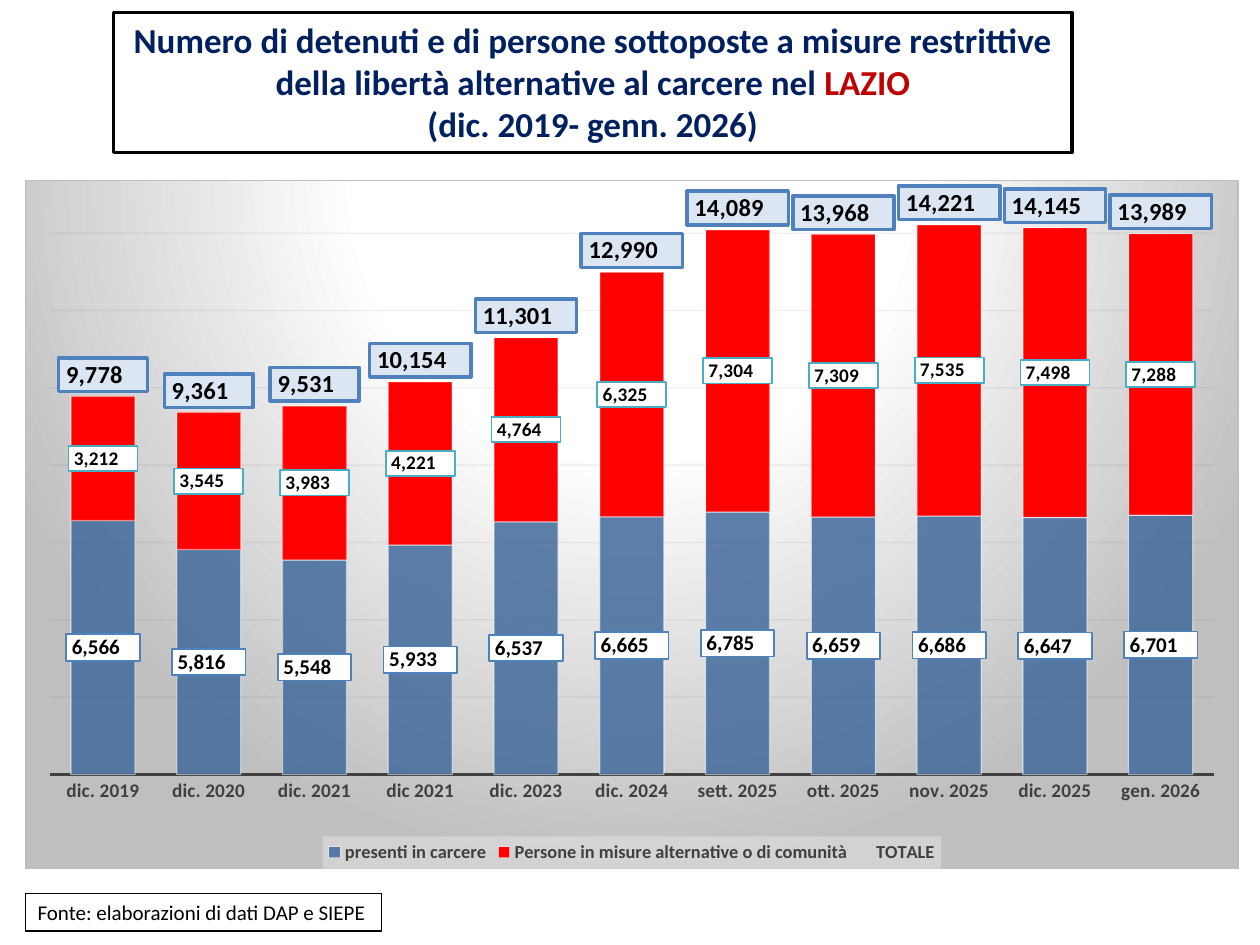
from dataclasses import dataclass

from lxml import etree
from pptx import Presentation
from pptx.chart.data import CategoryChartData
from pptx.dml.color import RGBColor as Rgb
from pptx.enum.chart import XL_CHART_TYPE as ChartType
from pptx.enum.chart import XL_LABEL_POSITION as LabelPlace
from pptx.enum.chart import XL_LEGEND_POSITION as LegendPlace
from pptx.enum.chart import XL_TICK_LABEL_POSITION as TickLabels
from pptx.enum.chart import XL_TICK_MARK as Tick
from pptx.enum.shapes import MSO_SHAPE as Preset
from pptx.enum.text import MSO_ANCHOR as Anchor
from pptx.enum.text import PP_ALIGN as Align
from pptx.oxml import parse_xml
from pptx.oxml.ns import nsdecls, qn
from pptx.util import Inches, Pt


@dataclass(frozen=True)
class Theme:
    font: str = "Calibri"
    navy: str = "002060"
    crimson: str = "C00000"
    black: str = "000000"
    white: str = "FFFFFF"
    axis: str = "404040"
    grid: str = "0D0D0D"
    grey: str = "BFBFBF"
    legend_fill: str = "F2F2F2"
    title_size: float = 20
    source_size: float = 12
    axis_size: float = 11
    legend_size: float = 10.5


@dataclass(frozen=True)
class Series:
    name: str
    values: tuple
    fill: str | None
    alpha: int
    label_size: float
    label_fill: str
    label_line: str
    label_width: float
    place: LabelPlace


@dataclass(frozen=True)
class Area:
    """Left, top, width and height in inches."""
    left: float
    top: float
    width: float
    height: float

    def lengths(self) -> tuple:
        return tuple(map(Inches, (self.left, self.top, self.width, self.height)))


THEME = Theme()
NUMBER_FORMAT = r'_-* #,##0\ _€_-;\-* #,##0\ _€_-;_-* "-"?'
MONTHS = ("dic. 2019", "dic. 2020", "dic. 2021", "dic 2021", "dic. 2023", "dic. 2024",
          "sett. 2025", "ott. 2025", "nov. 2025", "dic. 2025", "gen. 2026")
PRISON = (6566, 5816, 5548, 5933, 6537, 6665, 6785, 6659, 6686, 6647, 6701)
ALTERNATIVE = (3212, 3545, 3983, 4221, 4764, 6325, 7304, 7309, 7535, 7498, 7288)
TOTAL = tuple(map(sum, zip(PRISON, ALTERNATIVE)))
SERIES = (
    Series("presenti in carcere", PRISON, "426B9D", 85,
           12, "FFFFFF", "4F81BD", 1, LabelPlace.CENTER),
    Series("Persone in misure alternative o di comunità", ALTERNATIVE, "FF0000", 100,
           11, "FFFFFF", "4BACC6", 1, LabelPlace.CENTER),
    Series("TOTALE", TOTAL, None, 100,
           14, "DCE6F2", "4F81BD", 2, LabelPlace.INSIDE_BASE),
)


def style_font(font, size: float, color: str, bold: bool = False) -> None:
    font.name, font.size, font.bold = THEME.font, Pt(size), bold
    font.color.rgb = Rgb.from_string(color)


def set_alpha(element, percent: int) -> None:
    """Make every solid colour below the element partly transparent."""
    for color in element.iter(qn("a:srgbClr")):
        etree.SubElement(color, qn("a:alpha")).set("val", str(percent * 1000))


def style_line(line, color: str, width: float) -> None:
    line.color.rgb = Rgb.from_string(color)
    line.width = Pt(width)


def solid(color: str, alpha: int = 100) -> str:
    return (f'<a:solidFill><a:srgbClr val="{color}"><a:alpha val="{alpha * 1000}"/>'
            f'</a:srgbClr></a:solidFill>')


def outline(color: str, width: float) -> str:
    return f'<a:ln w="{Pt(width)}">{solid(color)}</a:ln>'


def shape_properties(content: str):
    return parse_xml(f'<c:spPr {nsdecls("c", "a")}>{content}</c:spPr>')


def manual_layout(left: float, top: float, width: float, height: float, inner: bool):
    """Place a chart part by shares of the chart's size."""
    target = '<c:layoutTarget val="inner"/>' if inner else ""
    return parse_xml(
        f'<c:layout {nsdecls("c")}><c:manualLayout>{target}'
        f'<c:xMode val="edge"/><c:yMode val="edge"/><c:x val="{left}"/><c:y val="{top}"/>'
        f'<c:w val="{width}"/><c:h val="{height}"/></c:manualLayout></c:layout>')


def add_box(slide, area: Area, line_width: float, wrap: bool):
    box = slide.shapes.add_shape(Preset.RECTANGLE, *area.lengths())
    box.shadow.inherit = False
    box.fill.solid()
    box.fill.fore_color.rgb = Rgb.from_string(THEME.white)
    style_line(box.line, THEME.black, line_width)
    box.text_frame.word_wrap = wrap
    box.text_frame.vertical_anchor = Anchor.TOP
    return box.text_frame


def add_span(para, text: str, size: float, color: str, bold: bool) -> None:
    span = para.add_run()
    span.text = text
    style_font(span.font, size, color, bold)


def add_title(slide) -> None:
    frame = add_box(slide, Area(0.9, 0.1, 7.61, 1.11), 2, True)
    lines = (
        (("Numero di detenuti e di persone sottoposte a misure restrittive "
          "della libertà alternative al carcere nel ", THEME.navy), ("LAZIO", THEME.crimson)),
        (("(dic. 2019- genn. 2026)", THEME.navy),),
    )
    for index, spans in enumerate(lines):
        para = frame.add_paragraph() if index else frame.paragraphs[0]
        para.alignment = Align.CENTER
        for text, color in spans:
            add_span(para, text, THEME.title_size, color, True)


def add_source(slide) -> None:
    para = add_box(slide, Area(0.2, 7.09, 2.83, 0.3), 0.75, False).paragraphs[0]
    para.alignment = Align.LEFT
    add_span(para, "Fonte: elaborazioni di dati DAP e SIEPE",
             THEME.source_size, THEME.black, False)


def style_series(plotted, series: Series) -> None:
    shape = plotted.format
    if series.fill:
        shape.fill.solid()
        shape.fill.fore_color.rgb = Rgb.from_string(series.fill)
        set_alpha(plotted._element.spPr, series.alpha)
        style_line(shape.line, THEME.white, 0.75)
        set_alpha(plotted._element.spPr.find(qn("a:ln")), 50)
    else:
        shape.fill.background()
        shape.line.fill.background()
    labels = plotted.data_labels
    labels.show_value = True
    labels.number_format, labels.number_format_is_linked = NUMBER_FORMAT, False
    labels.position = series.place
    style_font(labels.font, series.label_size, THEME.black, True)
    labels._element.find(qn("c:txPr")).addprevious(shape_properties(
        solid(series.label_fill) + outline(series.label_line, series.label_width)))


def style_axes(chart) -> None:
    months, values = chart.category_axis, chart.value_axis
    months.major_tick_mark = months.minor_tick_mark = Tick.NONE
    style_font(months.tick_labels.font, THEME.axis_size, THEME.axis, True)
    style_line(months.format.line, THEME.axis, 1.5)
    values.minimum_scale, values.maximum_scale = 0, 15000
    values.tick_label_position = TickLabels.NONE
    values.visible = False
    values.has_major_gridlines = True
    values.tick_labels.number_format = NUMBER_FORMAT
    values.tick_labels.number_format_is_linked = False
    style_line(values.major_gridlines.format.line, THEME.grid, 0.75)
    set_alpha(values._element.find(qn("c:majorGridlines")), 6)


def style_legend(chart) -> None:
    chart.has_legend = True
    legend = chart.legend
    legend.position, legend.include_in_layout = LegendPlace.BOTTOM, False
    style_font(legend.font, THEME.legend_size, THEME.axis, True)
    legend._element.find(qn("c:txPr")).addprevious(
        shape_properties(solid(THEME.legend_fill, 39)))
    for layout in legend._element.findall(qn("c:layout")):
        legend._element.remove(layout)
    legend._element.find(qn("c:overlay")).addprevious(
        manual_layout(0.245, 0.953, 0.51, 0.047, False))


def style_background(chart) -> None:
    stops = "".join(f'<a:gs pos="{share * 1000}"><a:srgbClr val="{color}"/></a:gs>'
                    for share, color in ((0, THEME.white), (39, THEME.white), (100, THEME.grey)))
    gradient = (f'<a:gradFill><a:gsLst>{stops}</a:gsLst><a:path path="circle">'
                '<a:fillToRect l="50000" t="-80000" r="50000" b="180000"/></a:path></a:gradFill>')
    chart._chartSpace.find(qn("c:chart")).addnext(
        shape_properties(gradient + outline(THEME.grey, 0.75)))


def add_history(slide) -> None:
    data = CategoryChartData()
    data.categories = MONTHS
    for series in SERIES:
        data.add_series(series.name, series.values)
    chart = slide.shapes.add_chart(
        ChartType.COLUMN_STACKED, *Area(0.2, 1.43, 9.63, 5.47).lengths(), data).chart
    chart.has_title = False
    style_font(chart.font, THEME.legend_size, THEME.black)
    plot = chart.plots[0]
    plot.gap_width, plot.overlap, plot.vary_by_categories = 65, 100, False
    for plotted, series in zip(plot.series, SERIES):
        style_series(plotted, series)
    style_axes(chart)
    style_legend(chart)
    style_background(chart)
    area = chart._chartSpace.find(qn("c:chart")).find(qn("c:plotArea"))
    for layout in area.findall(qn("c:layout")):
        area.remove(layout)
    area.insert(0, manual_layout(0.02, 0.02, 0.96, 0.843, True))


def main() -> None:
    deck = Presentation()
    deck.slide_width, deck.slide_height = Inches(10), Inches(7.5)
    slide = deck.slides.add_slide(deck.slide_layouts[6])
    add_title(slide)
    add_source(slide)
    add_history(slide)
    deck.save("out.pptx")


if __name__ == "__main__":
    main()
